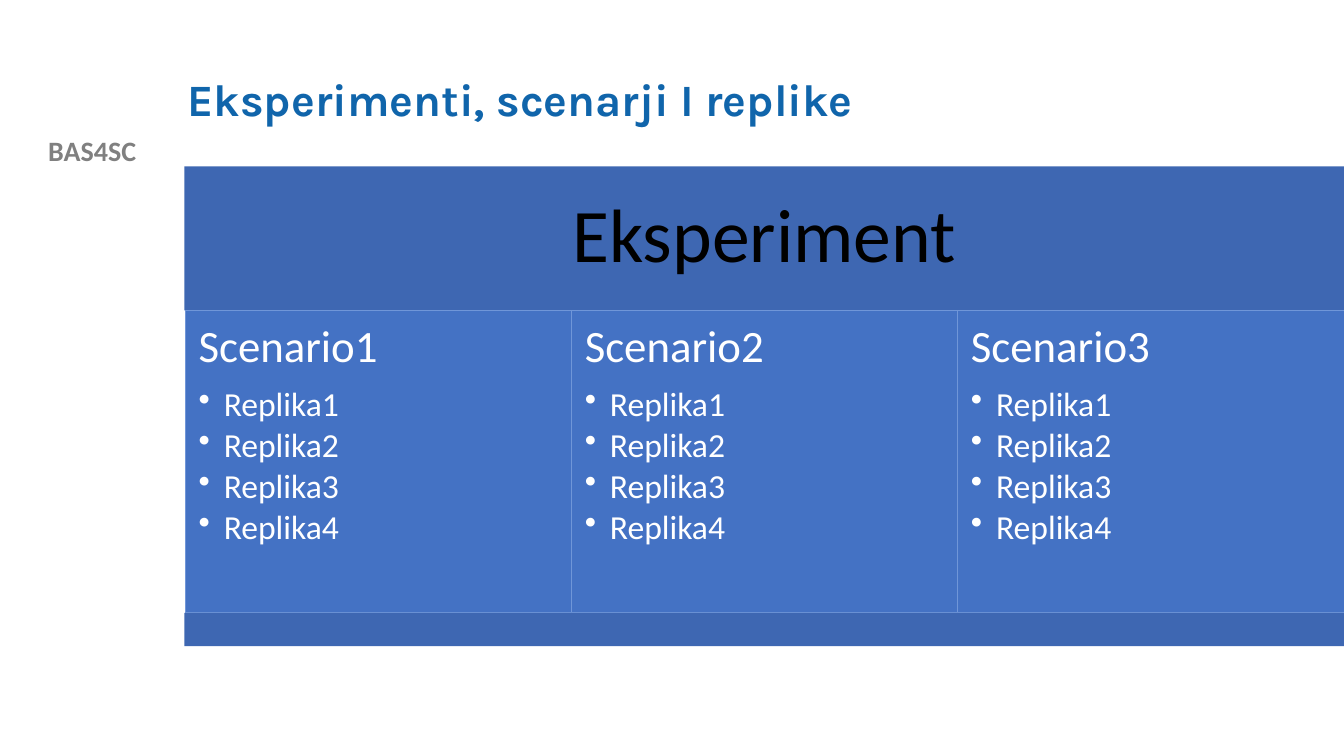
from lxml import etree
from pptx import Presentation
from pptx.dml.color import RGBColor
from pptx.enum import shapes as sh, text as tx
from pptx.oxml.ns import qn
from pptx.util import Inches, Pt

MID, TOP = tx.MSO_ANCHOR.MIDDLE, tx.MSO_ANCHOR.TOP
LEFT, MIDDLE = tx.PP_ALIGN.LEFT, tx.PP_ALIGN.CENTER


def paint(color, code):
    color.rgb = RGBColor.from_string(code)


def write(par, words, size, code, bold=False, **form):
    par.text = words
    for key, val in form.items():
        setattr(par, key, val)
    font = par.runs[0].font
    for key, val in {"name": "Calibri", "size": Pt(size), "bold": bold}.items():
        setattr(font, key, val)
    paint(font.color, code)


prs = Presentation()
prs.slide_width, prs.slide_height = Inches(13.33), Inches(7.5)
slide = prs.slides.add_slide(prs.slide_layouts[5])

# Side label
label = slide.shapes.add_textbox(Inches(0), Inches(1.28), Inches(1.83), Inches(0.43))
label.text_frame.word_wrap = True
write(label.text_frame.paragraphs[0], "BAS4SC", 20, "808080", True, alignment=MIDDLE)

# Title
title = slide.shapes.title
title.left, title.top = Inches(1.76), Inches(0.4)
title.width, title.height = Inches(10.66), Inches(1.22)
title.text_frame.vertical_anchor = MID
head = title.text_frame.paragraphs[0]
write(head, "Eksperimenti, scenarji I replike", 32, "1065AB", True,
      alignment=LEFT, line_spacing=0.9)
head.runs[0].font.name = "Karla"

# Header, three scenarios and footer: left, top, width, height, fill, inset, anchor
wide = 3.83
names = ["Scenario1", "Scenario2", "Scenario3"]
parts = [("Eksperiment", 1.83, 1.65, 11.5, 1.43, "3E67B2", 0.23, MID)]
for i, name in enumerate(names):
    parts.append((name, 1.84 + i * wide, 3.08, wide, 3, "4472C4", 0.13, TOP))
parts.append(("", 1.83, 6.08, 11.5, 0.33, "3E67B2", 0.1, MID))

for name, x, y, w, h, fill, pad, anchor in parts:
    box = slide.shapes.add_shape(sh.MSO_SHAPE.RECTANGLE,
                                 Inches(x), Inches(y), Inches(w), Inches(h))
    box.shadow.inherit = False
    box.fill.solid()
    paint(box.fill.fore_color, fill)
    box.line.fill.background()
    frame = box.text_frame
    frame.word_wrap, frame.vertical_anchor = True, anchor
    for side in ("left", "top", "right", "bottom"):
        setattr(frame, "margin_" + side, Inches(pad))
    first = frame.paragraphs[0]
    if name == "Eksperiment":
        write(first, name, 54, "000000", alignment=MIDDLE, line_spacing=0.9)
    elif name in names:
        box.line.width = Pt(0.5)
        paint(box.line.color, "7096D8")
        write(first, name, 32, "FFFFFF", alignment=LEFT,
              line_spacing=0.9, space_after=Pt(11))
        # Bulleted replicas
        for n in range(1, 5):
            par = frame.add_paragraph()
            props = par._p.get_or_add_pPr()
            props.set("marL", str(Inches(0.25)))
            props.set("indent", str(-Inches(0.25)))
            etree.SubElement(props, qn("a:buChar")).set("char", "•")
            write(par, f"Replika{n}", 24, "FFFFFF", level=1, alignment=LEFT,
                  line_spacing=0.9, space_after=Pt(3.5))

prs.save("out.pptx")
